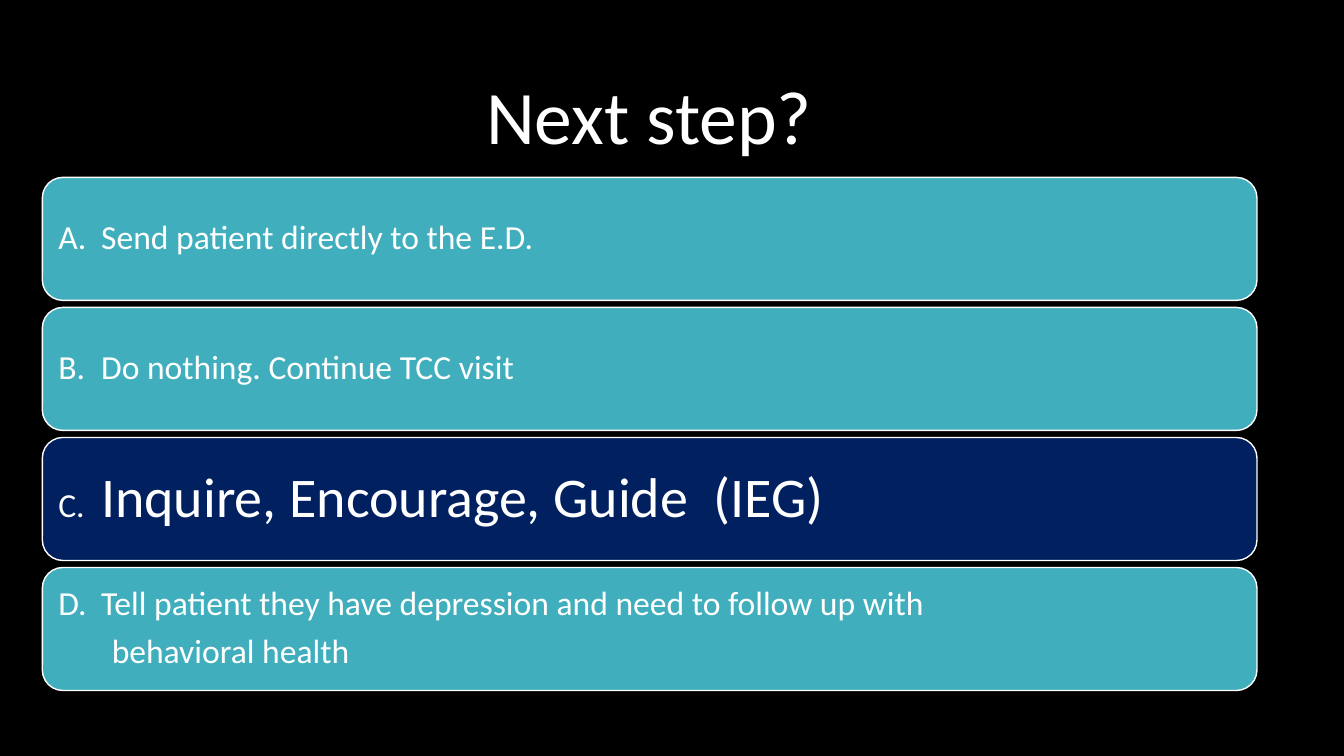
import pptx
import pptx.dml.color
import pptx.enum.shapes
import pptx.enum.text
import pptx.util

Pt = pptx.util.Pt
ALIGN = pptx.enum.text.PP_ALIGN

WHITE, BLACK, TEAL, NAVY = "FFFFFF", "000000", "41AEBD", "002060"
LEFT, TOP, WIDTH, HEIGHT, PITCH = 30.24, 126.72, 867.6, 87.84, 92.88
LETTER_INDENT, CONTINUATION_INDENT = 30.6, 38.2
ANSWER_SIZE, CORRECT_SIZE = 24, 40

# Letter, lines of the answer, whether it is the correct one
ANSWERS = [
    ("A.", ["Send patient directly to the E.D."], False),
    ("B.", ["Do nothing. Continue TCC visit"], False),
    ("C.", ["Inquire, Encourage, Guide  (IEG)"], True),
    ("D.", ["Tell patient they have depression and need to follow up with",
            "behavioral health"], False),
]


def rgb(value):
    return pptx.dml.color.RGBColor.from_string(value)


def add_run(paragraph, text, size):
    run = paragraph.add_run()
    run.text = text
    run.font.name = "Calibri"
    run.font.size = Pt(size)
    run.font.color.rgb = rgb(WHITE)


def set_indent(paragraph, margin, first_line):
    properties = paragraph._p.get_or_add_pPr()
    properties.set("marL", str(Pt(margin)))
    properties.set("indent", str(Pt(first_line)))


def add_title(slide, text):
    title = slide.shapes.title
    title.left, title.top = Pt(49.68), Pt(33.84)
    title.width, title.height = Pt(828), Pt(104.4)
    frame = title.text_frame
    frame.vertical_anchor = pptx.enum.text.MSO_ANCHOR.MIDDLE
    heading = frame.paragraphs[0]
    heading.alignment = ALIGN.CENTER
    heading.line_spacing = 0.9
    add_run(heading, text, 54)


def add_answer(slide, top, letter, lines, correct):
    """Draw one answer bar, with its letter hanging left of the wording."""
    bar = slide.shapes.add_shape(
        pptx.enum.shapes.MSO_SHAPE.ROUNDED_RECTANGLE,
        Pt(LEFT), Pt(top), Pt(WIDTH), Pt(HEIGHT))
    bar.shadow.inherit = False
    bar.fill.solid()
    bar.fill.fore_color.rgb = rgb(NAVY if correct else TEAL)
    bar.line.color.rgb = rgb(WHITE)
    bar.line.width = Pt(1)

    frame = bar.text_frame
    frame.word_wrap = True
    frame.vertical_anchor = pptx.enum.text.MSO_ANCHOR.MIDDLE
    frame.margin_left = frame.margin_right = Pt(7.2)
    frame.margin_top = frame.margin_bottom = Pt(7.2)
    for number, line in enumerate(lines):
        paragraph = frame.add_paragraph() if number else frame.paragraphs[0]
        paragraph.alignment = ALIGN.LEFT
        paragraph.line_spacing = 0.9
        paragraph.space_after = Pt(8.4)
        if number:
            set_indent(paragraph, CONTINUATION_INDENT, 0)
        else:
            set_indent(paragraph, LETTER_INDENT, -LETTER_INDENT)
            add_run(paragraph, letter + "\t", ANSWER_SIZE)
        add_run(paragraph, line, CORRECT_SIZE if correct else ANSWER_SIZE)


def main():
    presentation = pptx.Presentation()
    presentation.slide_width, presentation.slide_height = Pt(960), Pt(540)
    slide = presentation.slides.add_slide(presentation.slide_layouts[5])
    slide.background.fill.solid()
    slide.background.fill.fore_color.rgb = rgb(BLACK)

    add_title(slide, "Next step?")
    for row, (letter, lines, correct) in enumerate(ANSWERS):
        add_answer(slide, TOP + row * PITCH, letter, lines, correct)
    presentation.save("out.pptx")


if __name__ == "__main__":
    main()
